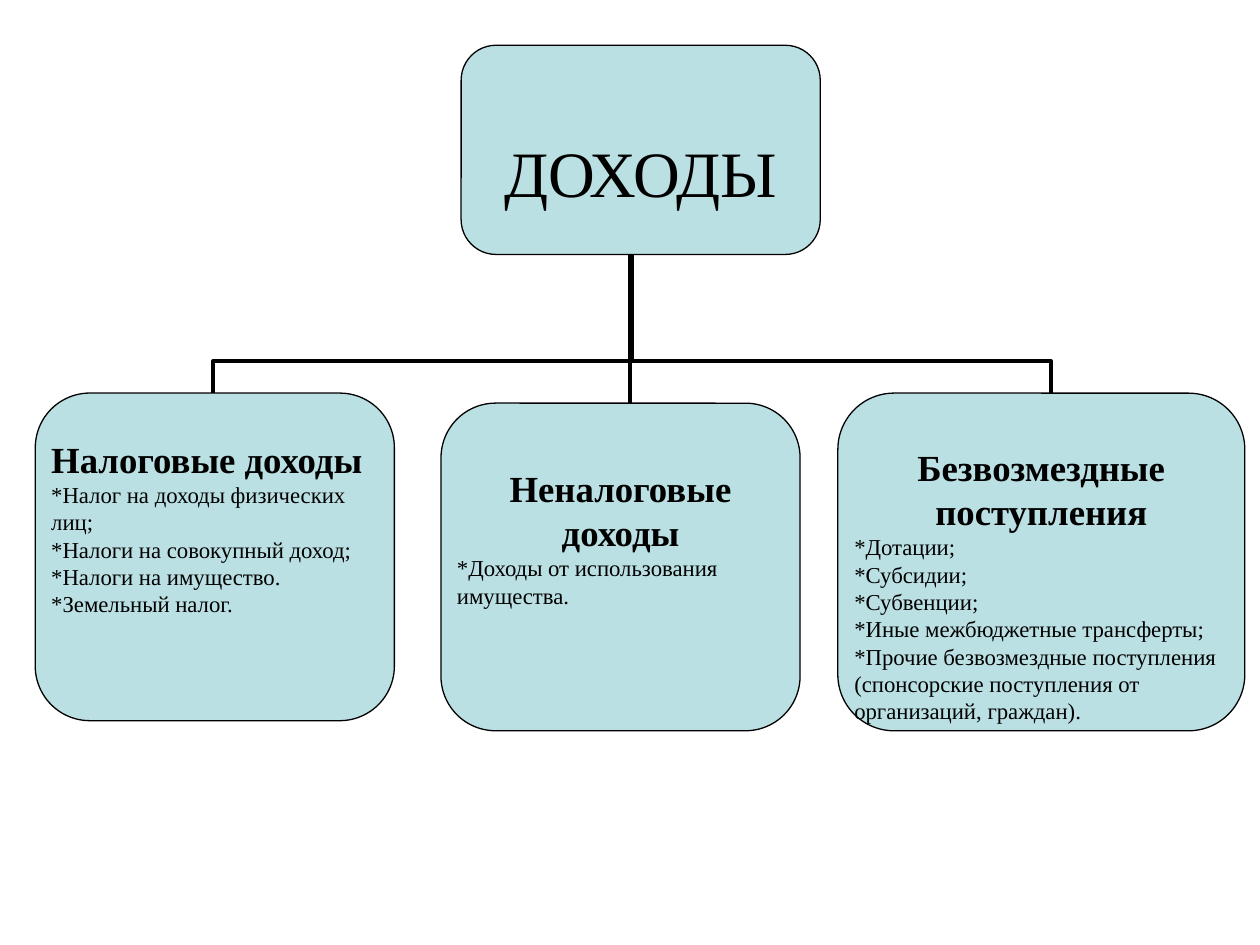
"""Build a slide showing the three branches of budget income as a tree."""
from dataclasses import dataclass

from lxml import etree
from pptx import Presentation
from pptx import util as u
from pptx.dml.color import RGBColor
from pptx.enum import shapes, text
from pptx.oxml.ns import qn


@dataclass(frozen=True)
class Theme:
    font: str = "Times New Roman"
    ink: RGBColor = RGBColor(0x00, 0x00, 0x00)
    fill: RGBColor = RGBColor(0xBB, 0xE0, 0xE3)
    root_size: int = 37
    head_size: int = 21
    item_size: int = 13
    outline: float = 0.75
    branch: float = 2.25


THEME = Theme()
WIDTH, HEIGHT = 10, 7.5
CENTER, LEFT = text.PP_ALIGN.CENTER, text.PP_ALIGN.LEFT

ROOT = {"at": (3.66, 0.36, 2.85, 1.66), "top": 0.61, "head": "ДОХОДЫ", "align": CENTER, "items": []}
BRANCHES = [
    {
        "at": (0.28, 3.12, 2.85, 2.6), "top": 0.22, "head": "Налоговые доходы", "align": LEFT,
        "items": [
            "*Налог на доходы физических лиц;",
            "*Налоги на совокупный доход;",
            "*Налоги на имущество.",
            "*Земельный налог.",
        ],
    },
    {
        "at": (3.5, 3.2, 2.85, 2.6), "top": 0.37, "head": "Неналоговые доходы", "align": CENTER,
        "items": ["*Доходы от использования имущества."],
    },
    {
        "at": (6.65, 3.12, 3.23, 2.68), "top": 0.28, "head": "Безвозмездные поступления", "align": CENTER,
        "items": [
            "*Дотации;",
            "*Субсидии;",
            "*Субвенции;",
            "*Иные межбюджетные трансферты;",
            "*Прочие безвозмездные поступления (спонсорские поступления от организаций, граждан).",
        ],
    },
]
LINKS = [
    ((8.34, 3.12), (5, 2.02), 0.23),
    ((5, 3.28), (5, 2.65), 0.5),
    ((1.69, 3.12), (5.02, 2.02), 0.23),
]


def add_link(slide, start, end, bend):
    (x1, y1), (x2, y2) = start, end
    middle_x, middle_y = (x1 + x2) / 2, (y1 + y2) / 2
    reach, spread = (y1 - y2) / 2, (x2 - x1) / 2
    link = slide.shapes.add_connector(
        shapes.MSO_CONNECTOR.ELBOW,
        u.Inches(middle_x - reach), u.Inches(middle_y - spread),
        u.Inches(middle_x + reach), u.Inches(middle_y + spread),
    )
    link.line.color.rgb = THEME.ink
    link.line.width = u.Pt(THEME.branch)
    properties = link._element.spPr
    properties.find(qn("a:xfrm")).set("rot", str(270 * 60000))
    guides = properties.find(qn("a:prstGeom")).find(qn("a:avLst"))
    etree.SubElement(guides, qn("a:gd"), name="adj1", fmla=f"val {round(bend * 100000)}")
    etree.SubElement(properties, qn("a:effectLst"))


def add_node(slide, node, head_size, bold):
    box = slide.shapes.add_shape(
        shapes.MSO_SHAPE.ROUNDED_RECTANGLE, *(u.Inches(value) for value in node["at"])
    )
    box.shadow.inherit = False
    box.fill.solid()
    box.fill.fore_color.rgb = THEME.fill
    box.line.color.rgb = THEME.ink
    box.line.width = u.Pt(THEME.outline)
    frame = box.text_frame
    frame.word_wrap = True
    frame.vertical_anchor = text.MSO_ANCHOR.TOP
    frame.margin_left = frame.margin_right = frame.margin_bottom = 0
    frame.margin_top = u.Inches(node["top"])

    lines = [(node["head"], head_size, bold, node["align"])]
    lines += [(item, THEME.item_size, False, LEFT) for item in node["items"]]
    for index, (words, size, heavy, align) in enumerate(lines):
        para = frame.add_paragraph() if index else frame.paragraphs[0]
        para.text = words
        para.alignment = align
        para.font.name = THEME.font
        para.font.size = u.Pt(size)
        para.font.bold = heavy
        para.font.color.rgb = THEME.ink


def main():
    deck = Presentation()
    deck.slide_width, deck.slide_height = u.Inches(WIDTH), u.Inches(HEIGHT)
    page = deck.slides.add_slide(deck.slide_layouts.get_by_name("Blank"))
    for start, end, bend in LINKS:
        add_link(page, start, end, bend)
    add_node(page, ROOT, THEME.root_size, False)
    for branch in BRANCHES:
        add_node(page, branch, THEME.head_size, True)
    deck.save("out.pptx")


if __name__ == "__main__":
    main()
